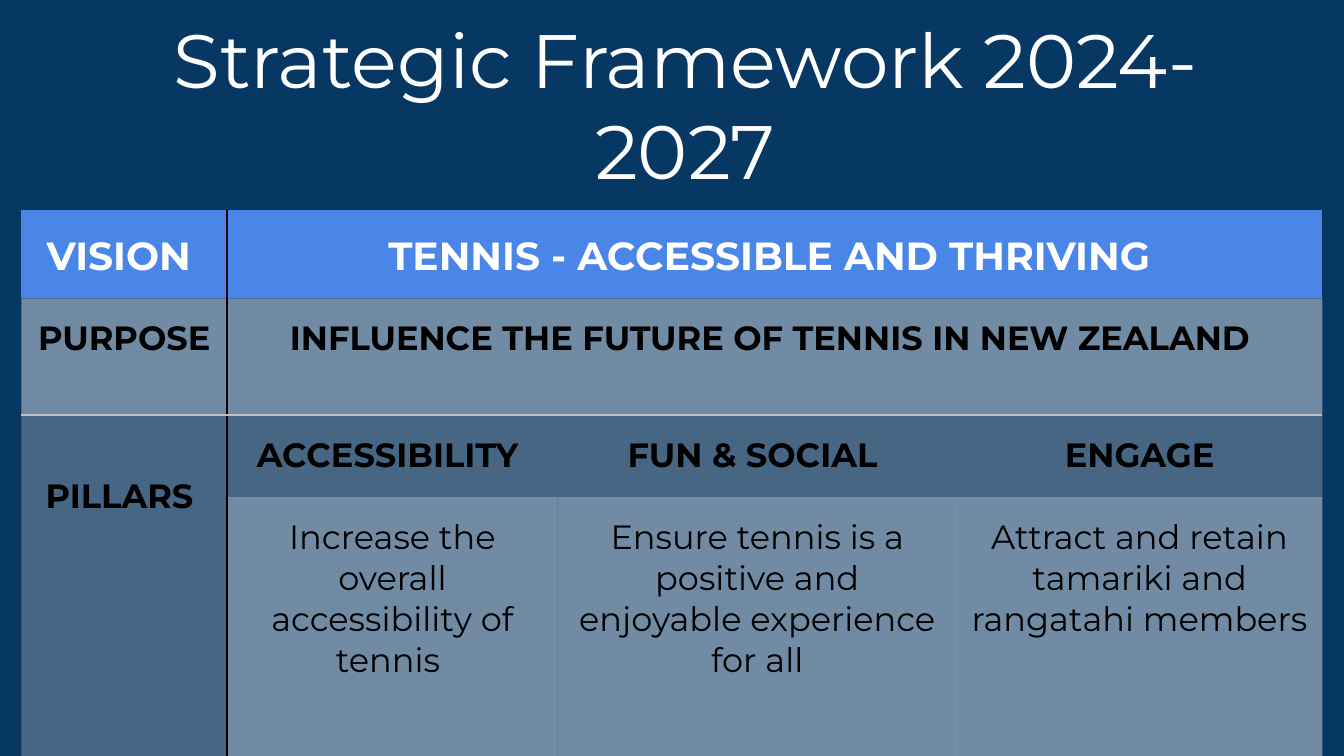
from lxml.etree import SubElement
from pptx import Presentation
from pptx.dml.color import RGBColor
from pptx.enum.text import MSO_ANCHOR, PP_ALIGN
from pptx.oxml.ns import qn
from pptx.util import Inches, Pt


def color(hex_text):
    return RGBColor.from_string(hex_text)


def add_text(frame, text, size, hex_text, bold=False):
    para = frame.paragraphs[0]
    para.alignment = PP_ALIGN.CENTER
    span = para.add_run()
    span.text = text
    span.font.name = "Montserrat"
    span.font.size = Pt(size)
    span.font.bold = bold
    span.font.color.rgb = color(hex_text)


deck = Presentation()
deck.slide_width = Inches(10)
deck.slide_height = Inches(5.625)
page = deck.slides.add_slide(deck.slide_layouts[5])
page.background.fill.solid()
page.background.fill.fore_color.rgb = color("073763")

# Title
title = page.shapes.title
title.left, title.top = Inches(1.06), Inches(0.07)
title.width, title.height = Inches(8.08), Inches(1.41)
frame = title.text_frame
frame.word_wrap = True
frame.vertical_anchor = MSO_ANCHOR.MIDDLE
frame.margin_left = frame.margin_right = Inches(0.1)
frame.margin_top = frame.margin_bottom = Inches(0.1)
add_text(frame, "Strategic Framework 2024-2027", 40.5, "FFFFFF")

# Framework table, plain style without grid
widths = [1.53, 2.46, 2.97, 2.72]
heights = [0.66, 0.87, 0.61, 1.93]
table = page.shapes.add_table(
    4, 4, Inches(0.16), Inches(1.56), Inches(sum(widths)), Inches(sum(heights))
).table
table.first_row = table.horz_banding = False
style = table._tbl.tblPr.find(qn("a:tableStyleId"))
style.text = "{2D5ABB26-0587-4C30-8999-92F81FD0307C}"
for column, width in zip(table.columns, widths):
    column.width = Inches(width)
for row, height in zip(table.rows, heights):
    row.height = Inches(height)
table.cell(0, 1).merge(table.cell(0, 3))
table.cell(1, 1).merge(table.cell(1, 3))
table.cell(2, 0).merge(table.cell(3, 0))

# Wording by row; None marks a cell covered by a merge
wording = [
    ["VISION ", "TENNIS - ACCESSIBLE AND THRIVING ", None, None],
    ["PURPOSE ", "INFLUENCE THE FUTURE OF TENNIS IN NEW ZEALAND ", None, None],
    ["PILLARS ", "ACCESSIBILITY ", "FUN & SOCIAL ", "ENGAGE"],
    [
        None,
        "Increase the overall accessibility of tennis ",
        "Ensure tennis is a positive and enjoyable experience for all",
        "Attract and retain tamariki and rangatahi members ",
    ],
]
# Fill and its opacity in percent, text size and colour, bold
row_looks = [
    ("4A86E8", 100, 21, "FFFFFF", True),
    ("F2F2F2", 45, 18, "000000", True),
    ("BFBFBF", 35, 18, "000000", True),
    ("F2F2F2", 45, 18, "000000", False),
]

for row, (texts, look) in enumerate(zip(wording, row_looks)):
    fill, opacity, size, ink, bold = look
    for column, text in enumerate(texts):
        cell = table.cell(row, column)
        properties = cell._tc.get_or_add_tcPr()

        # Black line beside the first column, grey line under the purpose
        borders = {
            "L": ("000000", 1.5) if column == 1 else None,
            "R": ("000000", 1.5) if column == 0 else None,
            "T": ("BFBFBF", 1) if row == 2 else None,
            "B": ("BFBFBF", 1) if row == 1 else None,
        }
        for side, border in borders.items():
            line = SubElement(properties, qn("a:ln" + side))
            if border:
                line.set("w", str(Pt(border[1])))
                paint = SubElement(line, qn("a:solidFill"))
                SubElement(paint, qn("a:srgbClr")).set("val", border[0])
            else:
                SubElement(line, qn("a:noFill"))

        # Translucent fill
        cell.fill.solid()
        cell.fill.fore_color.rgb = color(fill)
        if opacity < 100:
            tint = properties.find(qn("a:solidFill")).find(qn("a:srgbClr"))
            SubElement(tint, qn("a:alpha")).set("val", str(opacity * 1000))

        # Text
        if text is None:
            continue
        cell.margin_left = cell.margin_right = cell.margin_bottom = Inches(0.11)
        cell.margin_top = Inches(0.45 if text.startswith("PILLARS") else 0.15)
        cell.vertical_anchor = MSO_ANCHOR.MIDDLE if row == 0 else MSO_ANCHOR.TOP
        add_text(cell.text_frame, text, size, ink, bold)

deck.save("out.pptx")
